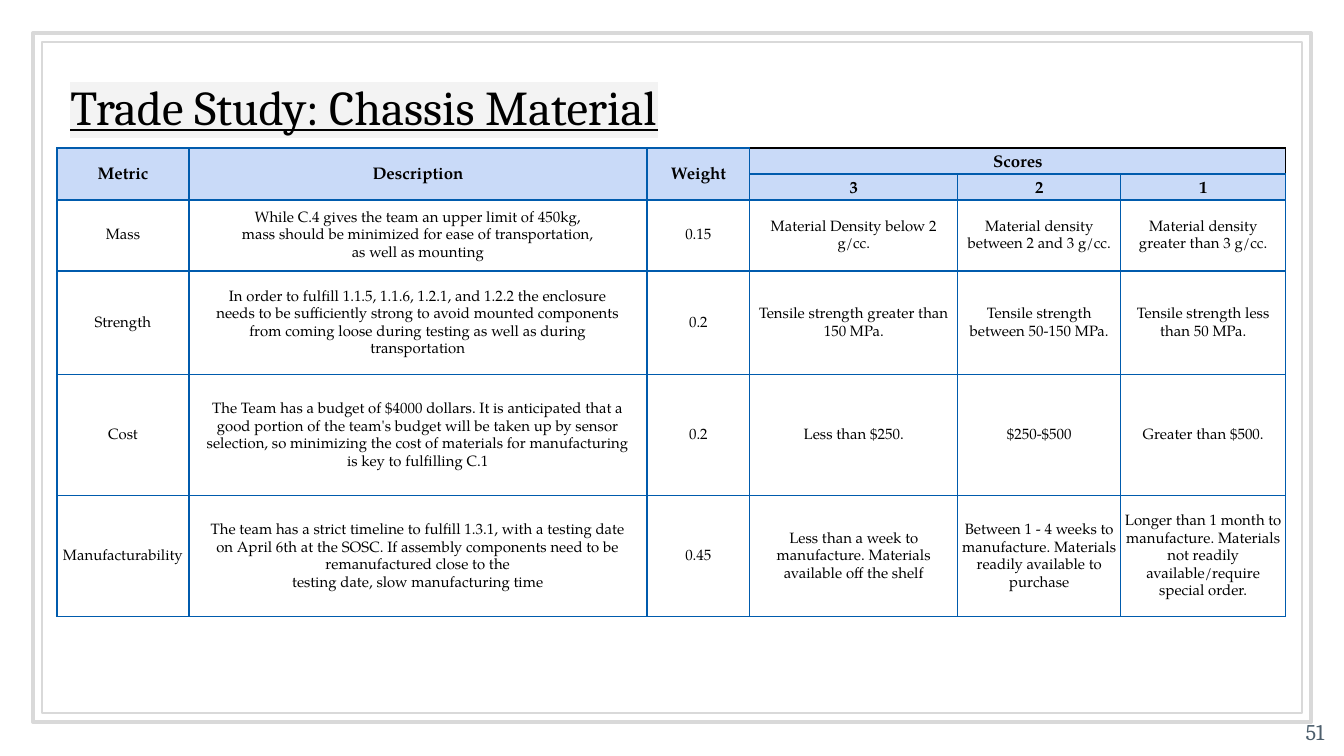
from lxml import etree
from pptx import Presentation
from pptx import util as u
from pptx.dml.color import RGBColor
from pptx.enum import shapes, text
from pptx.oxml.ns import qn

PX = 914400 / 134.4
COLORS = {"frame": "D9D9D9", "ink": "000000", "highlight": "F3F3F3", "number": "4D5F6D",
          "header": "C9DAF8", "body": "FFFFFF", "border": "005BAD"}


def px(*lengths):
    return [u.Emu(round(n * PX)) for n in lengths]


def add_run(paragraph, words, size, font, color):
    run = paragraph.add_run()
    run.text = words
    run.font.size = u.Pt(size)
    run.font.name = font
    run.font.color.rgb = RGBColor.from_string(COLORS[color])
    return run


prs = Presentation()
prs.slide_width, prs.slide_height = px(1344, 756)
slide = prs.slides.add_slide(prs.slide_layouts[5])

# Double frame
for box, weight in (((33, 33, 1278, 689), 2.25), ((42, 42, 1260, 671), 0.75)):
    frame = slide.shapes.add_shape(shapes.MSO_SHAPE.RECTANGLE, *px(*box))
    frame.shadow.inherit = False
    frame.fill.background()
    frame.line.color.rgb = RGBColor.from_string(COLORS["frame"])
    frame.line.width = u.Pt(weight)

# Title and page number
title = slide.shapes.title
title.left, title.top, title.width, title.height = px(57, 50, 1230, 112)
number = slide.shapes.add_textbox(*px(1286, 723, 58, 36))
for holder, anchor, align, words, size, color in (
        (title, text.MSO_ANCHOR.MIDDLE, text.PP_ALIGN.LEFT,
         "Trade Study: Chassis Material", 26, "ink"),
        (number, text.MSO_ANCHOR.BOTTOM, text.PP_ALIGN.CENTER, "51", 12, "number")):
    tf = holder.text_frame
    tf.word_wrap = True
    tf.auto_size = text.MSO_AUTO_SIZE.NONE
    tf.vertical_anchor = anchor
    tf.margin_left = tf.margin_right = tf.margin_top = tf.margin_bottom = u.Inches(0.1)
    tf.paragraphs[0].alignment = align
    add_run(tf.paragraphs[0], words, size, "Cambria", color)

title_font = title.text_frame.paragraphs[0].runs[0].font
title_font.underline = True
highlight = etree.Element(qn("a:highlight"))
etree.SubElement(highlight, qn("a:srgbClr"), val=COLORS["highlight"])
title.text_frame.paragraphs[0].runs[0]._r.rPr.find(qn("a:solidFill")).addnext(highlight)

# Trade table: a line break in a cell starts a new paragraph
criteria = [
    ["Metric", "Description", "Weight", "Scores", "", ""],
    ["", "", "", "3", "2", "1"],
    ["Mass",
     "While C.4 gives the team an upper limit of 450kg,\n"
     "mass should be minimized for ease of transportation,\n"
     "as well as mounting",
     "0.15", "Material Density below 2 g/cc.", "Material density between 2 and 3 g/cc.",
     "Material density greater than 3 g/cc."],
    ["Strength",
     "In order to fulfill 1.1.5, 1.1.6, 1.2.1, and 1.2.2 the enclosure\n"
     "needs to be sufficiently strong to avoid mounted components\n"
     "from coming loose during testing as well as during\n"
     "transportation",
     "0.2", "Tensile strength greater than 150 MPa.", "Tensile strength between 50-150 MPa.",
     "Tensile strength less than 50 MPa."],
    ["Cost",
     "The Team has a budget of $4000 dollars. It is anticipated that a\n"
     "good portion of the team's budget will be taken up by sensor\n"
     "selection, so minimizing the cost of materials for manufacturing\n"
     "is key to fulfilling C.1",
     "0.2", "Less than $250.", "$250-$500", "Greater than $500."],
    ["Manufacturability",
     "The team has a strict timeline to fulfill 1.3.1, with a testing date\n"
     "on April 6th at the SOSC. If assembly components need to be\n"
     "remanufactured close to the\n"
     "testing date, slow manufacturing time",
     "0.45", "Less than a week to manufacture. Materials available off the shelf",
     "Between 1 - 4 weeks to manufacture. Materials readily available to purchase",
     "Longer than 1 month to manufacture. Materials not readily available/require special order."],
]
widths = [132, 458, 103, 208, 163, 165]
heights = [26, 26, 71, 104, 121, 121]
trade = slide.shapes.add_table(len(heights), len(widths),
                               *px(57, 148, sum(widths), sum(heights))).table
trade.first_row = trade.horz_banding = False
for column, width in zip(trade.columns, px(*widths)):
    column.width = width
for row, height in zip(trade.rows, px(*heights)):
    row.height = height

for r, row in enumerate(criteria):
    for c, words in enumerate(row):
        cell = trade.cell(r, c)
        header = r < 2
        cell.margin_left = cell.margin_right = u.Inches(0.03)
        cell.margin_top = cell.margin_bottom = u.Inches(0.02)
        in_scores_header = header and c > 2
        cell.vertical_anchor = (text.MSO_ANCHOR.BOTTOM if in_scores_header
                                else text.MSO_ANCHOR.MIDDLE)
        if header or c == 1:
            cell.fill.solid()
            cell.fill.fore_color.rgb = RGBColor.from_string(COLORS["header" if header else "body"])
        else:
            cell.fill.background()

        for i, line in enumerate(words.split("\n") if words else []):
            paragraph = cell.text_frame.paragraphs[0] if i == 0 else cell.text_frame.add_paragraph()
            paragraph.alignment = text.PP_ALIGN.CENTER
            paragraph.line_spacing = 1.15
            run = add_run(paragraph, line, 9 if header else 8, "TeX Gyre Pagella", "ink")
            run.font.bold = header

        for i, side in enumerate("LRTB"):
            dark = r == 0 and c > 2 and side in "RT"
            border = etree.Element(qn(f"a:ln{side}"), w=str(u.Pt(0.75)))
            fill = etree.SubElement(border, qn("a:solidFill"))
            etree.SubElement(fill, qn("a:srgbClr"), val=COLORS["ink" if dark else "border"])
            cell._tc.tcPr.insert(i, border)

for c in range(3):
    trade.cell(0, c).merge(trade.cell(1, c))
trade.cell(0, 3).merge(trade.cell(0, 5))

prs.save("out.pptx")
